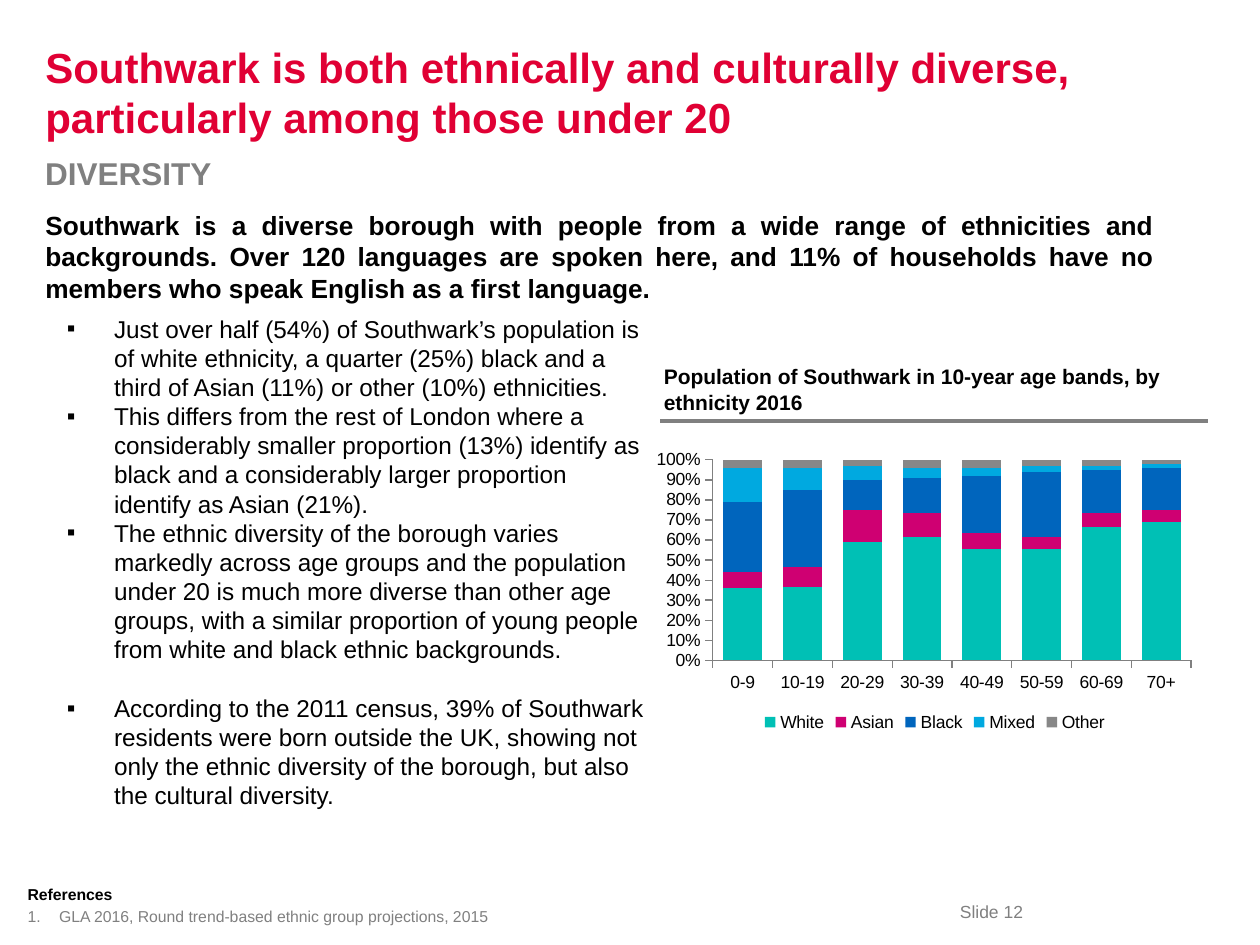
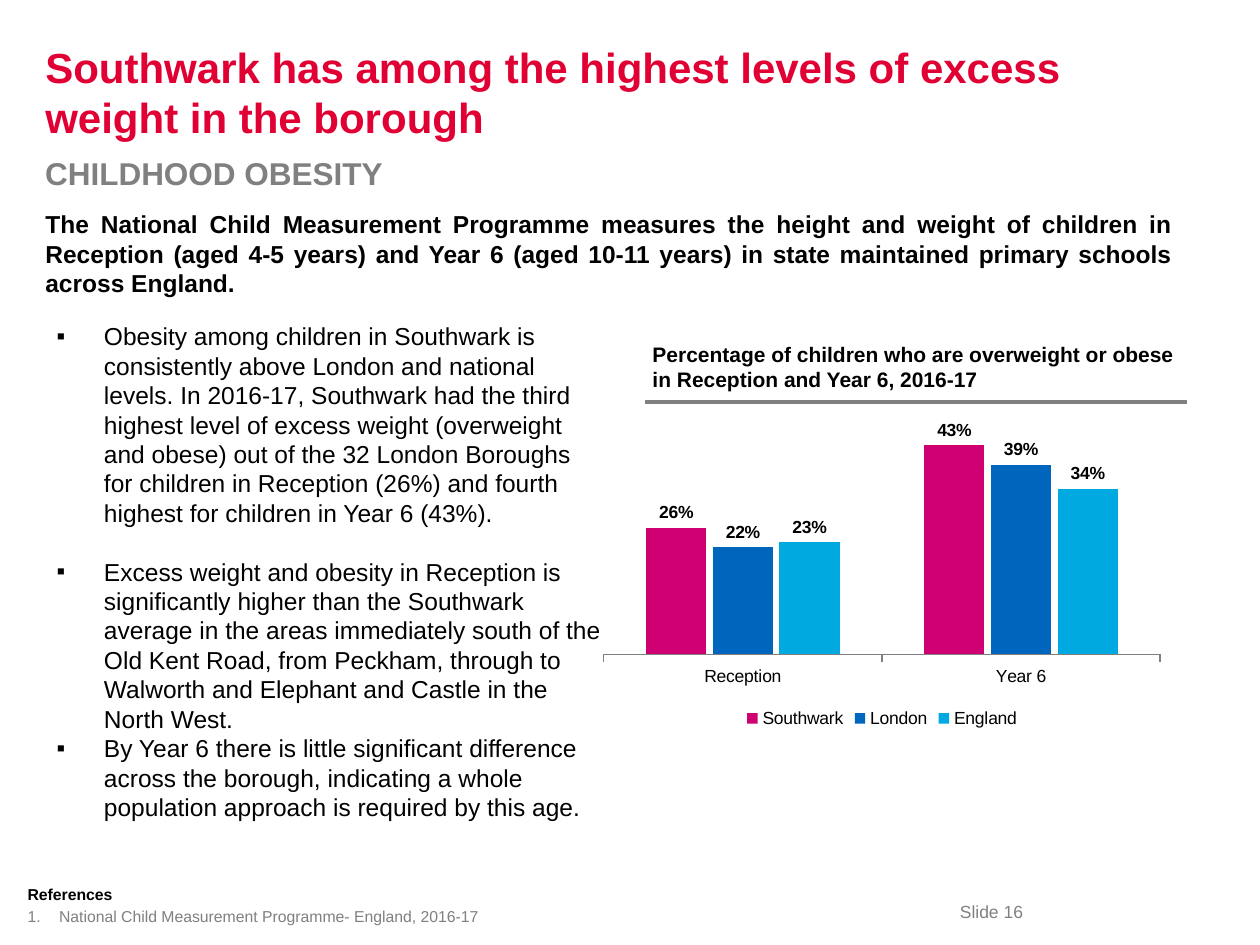
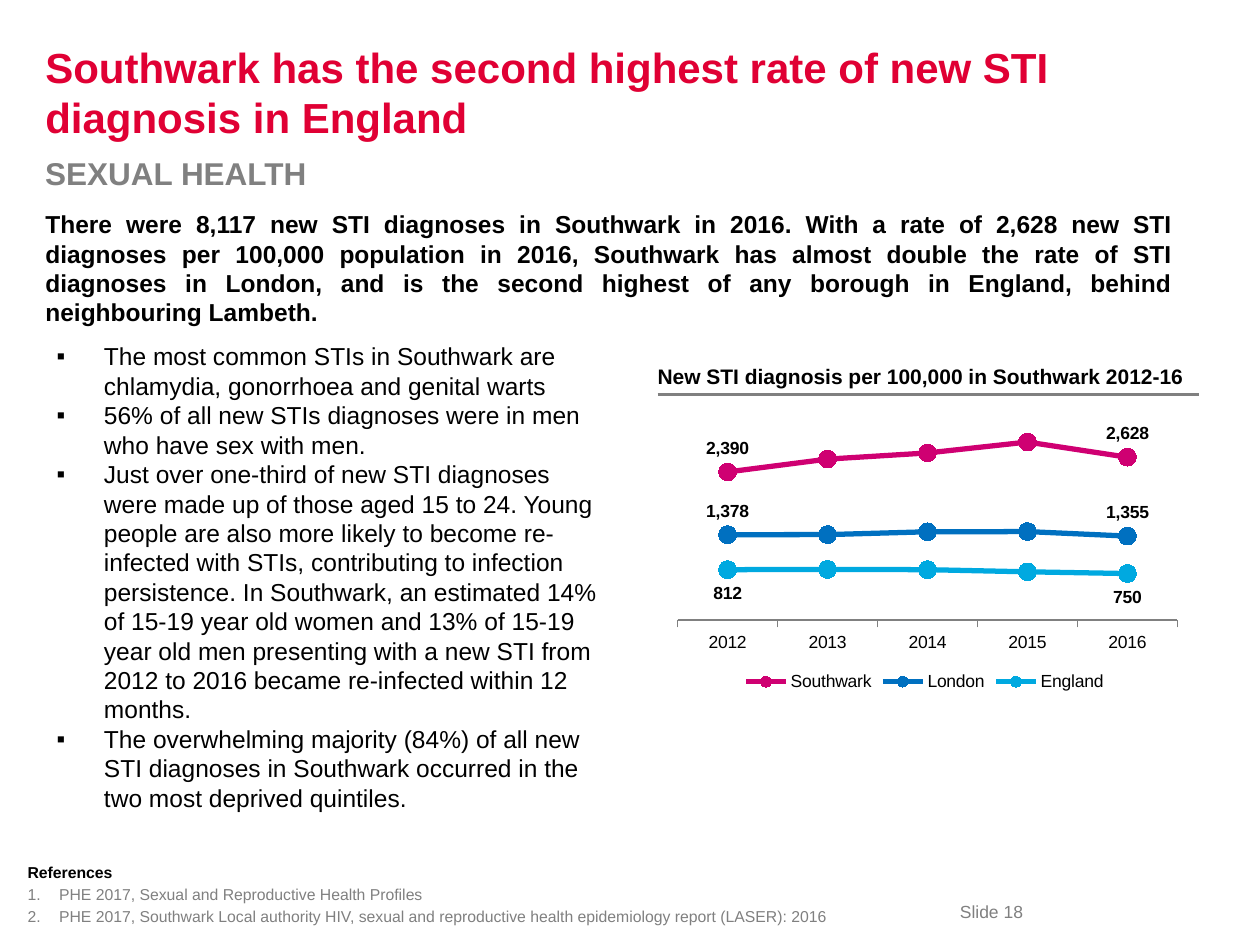
from dataclasses import dataclass
from typing import NamedTuple

from lxml.etree import SubElement
from pptx import Presentation
from pptx.chart.data import CategoryChartData
from pptx.dml.color import RGBColor
from pptx.enum.chart import XL_CHART_TYPE as ChartType
from pptx.enum.chart import XL_LABEL_POSITION as LabelPosition
from pptx.enum.chart import XL_LEGEND_POSITION as LegendPosition
from pptx.enum.chart import XL_MARKER_STYLE as MarkerStyle
from pptx.enum.chart import XL_TICK_MARK as TickMark
from pptx.enum.shapes import MSO_CONNECTOR as Connector
from pptx.enum.text import MSO_ANCHOR as Anchor
from pptx.enum.text import MSO_AUTO_SIZE as AutoSize
from pptx.enum.text import PP_ALIGN as Align
from pptx.oxml import parse_xml
from pptx.oxml.ns import nsdecls, qn
from pptx.util import Inches, Pt

# Shared look
FONT = "Arial"
RED = RGBColor(0xE0, 0x00, 0x34)
GREY = RGBColor(0x80, 0x80, 0x80)
BLACK = RGBColor(0x00, 0x00, 0x00)
TEAL = RGBColor(0x00, 0xC0, 0xB5)
MAGENTA = RGBColor(0xCF, 0x00, 0x72)
BLUE = RGBColor(0x00, 0x65, 0xBD)
LINE_BLUE = RGBColor(0x00, 0x70, 0xC0)
SKY = RGBColor(0x00, 0xA9, 0xE0)
SILVER = RGBColor(0x87, 0x87, 0x87)

# The slide is a grid of 100 columns by 75 rows of square cells
WIDTH, HEIGHT = Inches(10), Inches(7.5)
CELL = WIDTH // 100
TWO_CONTENT_LAYOUT = 3
BULLET_INDENT, NUMBER_INDENT = 3.75, 2.5
RULE_COLS = 43


class Box(NamedTuple):
    col: float
    row: float
    cols: float
    rows: float


class Style(NamedTuple):
    size: float
    color: RGBColor = BLACK
    bold: bool = False


class Series(NamedTuple):
    name: str
    color: RGBColor
    values: tuple
    label_position: LabelPosition = LabelPosition.ABOVE


class Bullet(NamedTuple):
    text: str
    gap_before: float = 0


@dataclass
class ChartPart:
    kind: ChartType
    box: Box
    plot: Box  # shares of the chart's own size
    number_format: str
    axis_max: float
    categories: tuple
    series: tuple


@dataclass
class Topic:
    number: int
    title: str
    section: str
    lead: str
    lead_box: Box
    lead_size: float
    bullets: tuple
    bullet_box: Box
    bullet_size: float
    heading: str
    heading_box: Box
    rule_start: tuple
    rule_cols: float
    chart: ChartPart
    references: tuple


TITLE_BOX = Box(2.6, 2.1, 93.3, 10.4)
SECTION_BOX = Box(2.6, 11.7, 48.2, 4)
NUMBER_BOX = Box(75.2, 71, 7.2, 2.7)
REFERENCE_BOTTOM = 73.95
REFERENCE_ROW = 1.75


def cells(count: float) -> int:
    return round(count * CELL)


def place(shape, box: Box) -> None:
    shape.left, shape.top, shape.width, shape.height = map(cells, box)


def add_run(para, text: str, style: Style) -> None:
    span = para.add_run()
    span.text = text
    span.font.name = FONT
    span.font.size = Pt(style.size)
    span.font.bold = style.bold
    span.font.color.rgb = style.color


def set_marker(para, indent: float, tag: str, **attributes: str) -> None:
    """Set a hanging indent and a bullet, a number or none."""
    properties = para._p.get_or_add_pPr()
    properties.set("marL", str(cells(indent)))
    properties.set("indent", str(-cells(indent)))
    SubElement(properties, qn(tag), attributes)


def next_para(frame, first: bool):
    return frame.paragraphs[0] if first else frame.add_paragraph()


def prepare(shape, anchor: Anchor = Anchor.TOP, wrap: bool = True):
    frame = shape.text_frame
    frame.auto_size = AutoSize.NONE
    frame.word_wrap = wrap
    frame.vertical_anchor = anchor
    return frame


def add_label(page, box: Box, text: str, style: Style, wrap: bool = True) -> None:
    shape = page.shapes.add_textbox(*map(cells, box))
    add_run(prepare(shape, wrap=wrap).paragraphs[0], text, style)


def fill_title(page, text: str) -> None:
    place(page.shapes.title, TITLE_BOX)
    para = prepare(page.shapes.title, Anchor.MIDDLE).paragraphs[0]
    para.alignment = Align.LEFT
    add_run(para, text, Style(24, RED, True))


def fill_lead(page, topic: Topic) -> None:
    shape = page.placeholders[1]
    place(shape, topic.lead_box)
    para = prepare(shape).paragraphs[0]
    set_marker(para, 0, "a:buNone")
    para.alignment = Align.JUSTIFY
    para.space_before = Pt(0)
    add_run(para, topic.lead, Style(topic.lead_size, bold=True))


def fill_bullets(page, topic: Topic) -> None:
    shape = page.placeholders[2]
    place(shape, topic.bullet_box)
    frame = prepare(shape)
    for index, bullet in enumerate(topic.bullets):
        para = next_para(frame, index == 0)
        set_marker(para, BULLET_INDENT, "a:buChar", char="▪")
        para.space_before = Pt(bullet.gap_before)
        add_run(para, bullet.text, Style(topic.bullet_size))


def add_references(page, references: tuple) -> None:
    rows = 0.8 + REFERENCE_ROW * (len(references) + 1)
    box = Box(1.2, REFERENCE_BOTTOM - rows, 71.5, rows)
    frame = prepare(page.shapes.add_textbox(*map(cells, box)), Anchor.BOTTOM)
    add_run(frame.paragraphs[0], "References", Style(9, bold=True))
    for reference in references:
        para = frame.add_paragraph()
        set_marker(para, NUMBER_INDENT, "a:buAutoNum", type="arabicPeriod")
        para.space_before = Pt(1.8)
        add_run(para, reference, Style(9, GREY))


def add_rule(page, start: tuple, cols: float) -> None:
    col, row = start
    ends = map(cells, (col, row, col + cols, row))
    rule = page.shapes.add_connector(Connector.STRAIGHT, *ends)
    rule.line.color.rgb = GREY
    rule.line.width = Pt(2)
    SubElement(rule._element.spPr, qn("a:effectLst"))


# Charts
def set_font(font, bold: bool = False) -> None:
    font.name, font.size, font.bold = FONT, Pt(10), bold
    font.color.rgb = BLACK


def set_plot_area(chart, plot: Box) -> None:
    sizes = zip("xywh", plot)
    values = "".join(f'<c:{name} val="{share}"/>' for name, share in sizes)
    layout = parse_xml(
        f'<c:layout {nsdecls("c")}><c:manualLayout><c:layoutTarget val="inner"/>'
        f'<c:xMode val="edge"/><c:yMode val="edge"/>{values}'
        "</c:manualLayout></c:layout>")
    area = chart._chartSpace.chart.plotArea
    for old in area.findall(qn("c:layout")):
        area.remove(old)
    area.insert(0, layout)


def style_axis(axis) -> None:
    axis.has_major_gridlines = False
    axis.major_tick_mark = TickMark.OUTSIDE
    axis.minor_tick_mark = TickMark.NONE
    axis.format.line.color.rgb = GREY
    set_font(axis.tick_labels.font)


def style_line(drawn, series: Series) -> None:
    """Draw one line and label its two ends."""
    drawn.smooth = False
    drawn.format.line.color.rgb = series.color
    drawn.format.line.width = Pt(3)
    drawn.marker.style = MarkerStyle.CIRCLE
    drawn.marker.size = 10
    drawn.marker.format.fill.solid()
    drawn.marker.format.fill.fore_color.rgb = series.color
    drawn.marker.format.line.color.rgb = series.color
    drawn.data_labels.show_value = False
    for index in (0, len(series.values) - 1):
        label = drawn.points[index].data_label
        set_font(label.font, bold=True)
        label.position = series.label_position


def style_columns(plot, stacked: bool) -> None:
    plot.gap_width, plot.overlap = (54, 100) if stacked else (141, -11)
    if not stacked:
        plot.has_data_labels = True
        plot.data_labels.show_value = True
        plot.data_labels.position = LabelPosition.OUTSIDE_END
        set_font(plot.data_labels.font, bold=True)


def add_chart(page, part: ChartPart) -> None:
    data = CategoryChartData(number_format=part.number_format)
    data.categories = part.categories
    for series in part.series:
        data.add_series(series.name, series.values)
    chart = page.shapes.add_chart(part.kind, *map(cells, part.box), data).chart
    set_font(chart.font)
    chart.has_title = False
    chart.has_legend = True
    chart.legend.position = LegendPosition.BOTTOM
    chart.legend.include_in_layout = False
    set_font(chart.legend.font)
    set_plot_area(chart, part.plot)

    stacked = part.kind == ChartType.COLUMN_STACKED_100
    style_axis(chart.category_axis)
    style_axis(chart.value_axis)
    chart.value_axis.visible = stacked
    chart.value_axis.minimum_scale = 0
    chart.value_axis.maximum_scale = part.axis_max
    if stacked:
        chart.value_axis.major_unit = 0.1
        chart.value_axis.tick_labels.number_format = "0%"
        chart.value_axis.tick_labels.number_format_is_linked = False

    plot = chart.plots[0]
    plot.vary_by_categories = False
    is_line = part.kind == ChartType.LINE_MARKERS
    if not is_line:
        style_columns(plot, stacked)
    for drawn, series in zip(plot.series, part.series):
        if is_line:
            style_line(drawn, series)
        else:
            drawn.format.fill.solid()
            drawn.format.fill.fore_color.rgb = series.color


# Content
DIVERSITY = Topic(
    number=12,
    title="Southwark is both ethnically and culturally diverse, particularly among those under 20",
    section="DIVERSITY",
    lead="Southwark is a diverse borough with people from a wide range of ethnicities and backgrounds. Over 120 languages are spoken here, and 11% of households have no members who speak English as a first language.",
    lead_box=Box(2.6, 16.1, 90, 10.5),
    lead_size=15,
    bullets=(
        Bullet("Just over half (54%) of Southwark’s population is of white ethnicity, a quarter (25%) black and a third of Asian (11%) or other (10%) ethnicities."),
        Bullet("This differs from the rest of London where a considerably smaller proportion (13%) identify as black and a considerably larger proportion identify as Asian (21%)."),
        Bullet("The ethnic diversity of the borough varies markedly across age groups and the population under 20 is much more diverse than other age groups, with a similar proportion of young people from white and black ethnic backgrounds."),
        Bullet("According to the 2011 census, 39% of Southwark residents were born outside the UK, showing not only the ethnic diversity of the borough, but also the cultural diversity.", 16.7),
    ),
    bullet_box=Box(4.3, 24.4, 48.1, 40.8),
    bullet_size=13.9,
    heading="Population of Southwark in 10-year age bands, by ethnicity 2016",
    heading_box=Box(51.7, 28.4, 47.6, 5),
    rule_start=(52.4, 33.4),
    rule_cols=RULE_COLS + 0.5,
    chart=ChartPart(
        ChartType.COLUMN_STACKED_100, Box(51.6, 35.1, 45.2, 23.4),
        Box(0.11, 0.06, 0.84, 0.68), "0", 1,
        ("0-9", "10-19", "20-29", "30-39", "40-49", "50-59", "60-69", "70+"),
        (
            Series("White", TEAL, (36, 36, 59, 62, 55, 55, 66, 69)),
            Series("Asian", MAGENTA, (8, 10, 16, 12, 8, 6, 7, 6)),
            Series("Black", BLUE, (35, 38, 15, 18, 28, 32, 21, 21)),
            Series("Mixed", SKY, (17, 11, 7, 5, 4, 3, 2, 2)),
            Series("Other", SILVER, (4, 4, 3, 4, 4, 3, 3, 2)),
        )),
    references=("GLA 2016, Round trend-based ethnic group projections, 2015",),
)

OBESITY = Topic(
    number=16,
    title="Southwark has among the highest levels of excess weight in the borough",
    section="CHILDHOOD OBESITY",
    lead="The National Child Measurement Programme measures the height and weight of children in Reception (aged 4-5 years) and Year 6 (aged 10-11 years) in state maintained primary schools across England.",
    lead_box=Box(2.6, 16.1, 91.5, 13),
    lead_size=14,
    bullets=(
        Bullet("Obesity among children in Southwark is consistently above London and national levels. In 2016-17, Southwark had the third highest level of excess weight (overweight and obese) out of the 32 London Boroughs for children in Reception (26%) and fourth highest for children in Year 6 (43%)."),
        Bullet("Excess weight and obesity in Reception is significantly higher than the Southwark average in the areas immediately south of the Old Kent Road, from Peckham, through to Walworth and Elephant and Castle in the North West.", 16.8),
        Bullet("By Year 6 there is little significant difference across the borough, indicating a whole population approach is required by this age."),
    ),
    bullet_box=Box(3.5, 25, 45.3, 44.1),
    bullet_size=14,
    heading="Percentage of children who are overweight or obese in Reception and Year 6, 2016-17",
    heading_box=Box(50.8, 26.6, 45.2, 5),
    rule_start=(51.2, 31.9),
    rule_cols=RULE_COLS,
    chart=ChartPart(
        ChartType.COLUMN_CLUSTERED, Box(47, 32.1, 46, 26.1),
        Box(0.02, 0.02, 0.96, 0.74), "0%", 0.5,
        ("Reception", "Year 6"),
        (
            Series("Southwark", MAGENTA, (0.26, 0.43)),
            Series("London", BLUE, (0.22, 0.39)),
            Series("England", SKY, (0.23, 0.34)),
        )),
    references=("National Child Measurement Programme- England, 2016-17",),
)

SEXUAL_HEALTH = Topic(
    number=18,
    title="Southwark has the second highest rate of new STI diagnosis in England",
    section="SEXUAL HEALTH",
    lead="There were 8,117 new STI diagnoses in Southwark in 2016. With a rate of 2,628 new STI diagnoses per 100,000 population in 2016, Southwark has almost double the rate of STI diagnoses in London, and is the second highest of any borough in England, behind neighbouring Lambeth.",
    lead_box=Box(2.6, 16.1, 91.5, 13),
    lead_size=14,
    bullets=(
        Bullet("The most common STIs in Southwark are chlamydia, gonorrhoea and genital warts"),
        Bullet("56% of all new STIs diagnoses were in men who have sex with men."),
        Bullet("Just over one-third of new STI diagnoses were made up of those aged 15 to 24. Young people are also more likely to become re-infected with STIs, contributing to infection persistence. In Southwark, an estimated 14% of 15-19 year old women and 13% of 15-19 year old men presenting with a new STI from 2012 to 2016 became re-infected within 12 months."),
        Bullet("The overwhelming majority (84%) of all new STI diagnoses in Southwark occurred in the two most deprived quintiles."),
    ),
    bullet_box=Box(3.5, 26.6, 45.3, 38.7),
    bullet_size=14,
    heading="New STI diagnosis per 100,000 in Southwark 2012-16",
    heading_box=Box(51.2, 28.4, 45.2, 3),
    rule_start=(52.2, 31.3),
    rule_cols=RULE_COLS,
    chart=ChartPart(
        ChartType.LINE_MARKERS, Box(51.6, 33.6, 43.6, 21.7),
        Box(0.05, 0.04, 0.91, 0.68), "#,##0", 3000,
        ("2012", "2013", "2014", "2015", "2016"),
        (
            Series("Southwark", MAGENTA, (2390, 2598, 2697, 2873, 2628)),
            Series("London", LINE_BLUE, (1378, 1379, 1425, 1428, 1355)),
            Series("England", SKY, (812, 817, 812, 778, 750), LabelPosition.BELOW),
        )),
    references=(
        "PHE 2017, Sexual and Reproductive Health Profiles",
        "PHE 2017, Southwark Local authority HIV, sexual and reproductive health epidemiology report (LASER): 2016",
    ),
)


def add_topic(deck, topic: Topic) -> None:
    page = deck.slides.add_slide(deck.slide_layouts[TWO_CONTENT_LAYOUT])
    fill_title(page, topic.title)
    add_label(page, SECTION_BOX, topic.section, Style(18, GREY, True))
    fill_lead(page, topic)
    fill_bullets(page, topic)
    add_chart(page, topic.chart)
    add_label(page, topic.heading_box, topic.heading, Style(12, bold=True))
    add_rule(page, topic.rule_start, topic.rule_cols)
    add_references(page, topic.references)
    add_label(page, NUMBER_BOX, f"Slide {topic.number}", Style(10, GREY), wrap=False)


def main() -> None:
    deck = Presentation()
    deck.slide_width, deck.slide_height = WIDTH, HEIGHT
    for topic in (DIVERSITY, OBESITY, SEXUAL_HEALTH):
        add_topic(deck, topic)
    deck.save("out.pptx")


if __name__ == "__main__":
    main()
